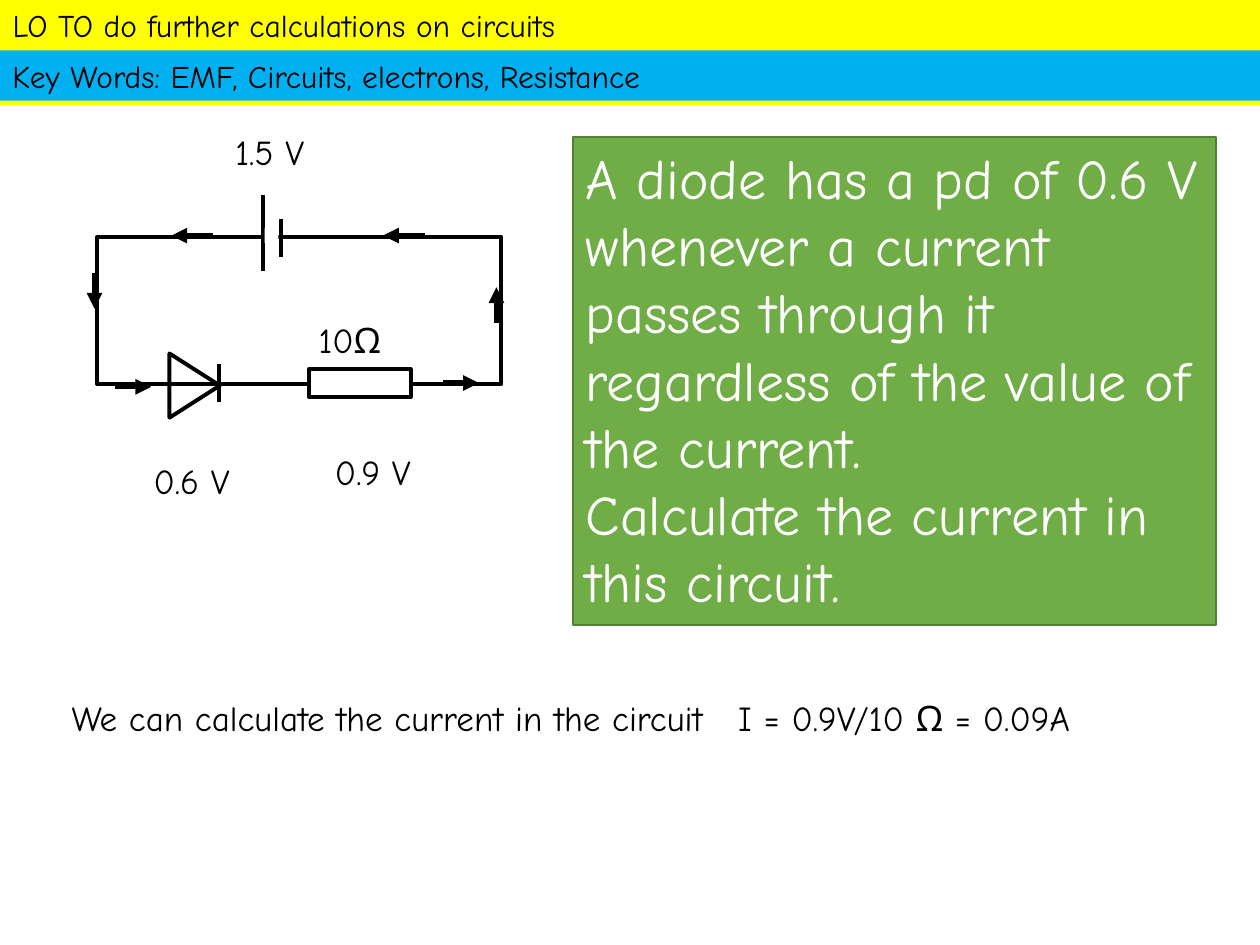
from lxml.etree import SubElement
from pptx import Presentation
from pptx.dml.color import RGBColor
from pptx.enum.shapes import MSO_CONNECTOR, MSO_SHAPE
from pptx.enum.text import MSO_ANCHOR, MSO_AUTO_SIZE, PP_ALIGN
from pptx.oxml.ns import qn
from pptx.util import Inches, Pt

FONT = "Comic Neue"
BLACK = RGBColor(0x00, 0x00, 0x00)
WHITE = RGBColor(0xFF, 0xFF, 0xFF)
YELLOW = RGBColor(0xFF, 0xFF, 0x00)
BLUE = RGBColor(0x00, 0xB0, 0xF0)
GREEN = RGBColor(0x70, 0xAD, 0x47)
DARK_GREEN = RGBColor(0x53, 0x80, 0x35)

OBJECTIVE = "LO TO do further calculations on circuits"
KEY_WORDS = "Key Words: EMF, Circuits, electrons, Resistance"
QUESTION = [
    "A diode has a pd of 0.6 V whenever a current passes through it "
    "regardless of the value of the current.",
    "Calculate the current in this circuit.",
]
ANSWER = "We can calculate the current in the circuit\tI = 0.9V/10 Ω = 0.09A"
ANSWER_TAB = 5.29

LOOP = (0.77, 1.88, 3.21, 1.17)
CELL_GAP = (2.1, 1.81, 0.11, 0.12)
RESISTOR = (2.45, 2.93, 0.81, 0.22)
DIODE = (1.29, 2.86, 0.51, 0.4)
CELL_PLATES = [((2.09, 1.55), (2.09, 2.15)), ((2.23, 1.74), (2.23, 2.04))]
DIODE_BAR = ((1.74, 2.89), (1.74, 3.19))
CURRENT_ARROWS = [
    ((1.69, 1.87), (1.36, 1.87)),
    ((0.75, 2.17), (0.75, 2.45)),
    ((0.91, 3.07), (1.2, 3.07)),
    ((3.52, 3.04), (3.8, 3.04)),
    ((3.94, 2.56), (3.94, 2.28)),
    ((3.37, 1.87), (3.04, 1.87)),
]
LABELS = [
    ("0.6 V", (1.12, 3.6, 0.88, 0.43)),
    ("0.9 V", (2.56, 3.53, 0.88, 0.43)),
    ("1.5 V", (1.77, 0.99, 0.83, 0.43)),
    ("10Ω", (2.43, 2.48, 0.76, 0.43)),
]


def place(shape, box):
    shape.left, shape.top, shape.width, shape.height = map(Inches, box)


def paint(shape, fill=None, line=None, weight=2.25):
    if fill is None:
        shape.fill.background()
    else:
        shape.fill.solid()
        shape.fill.fore_color.rgb = fill
    if line is None:
        shape.line.fill.background()
    else:
        shape.line.color.rgb = line
        shape.line.width = Pt(weight)


def write(shape, paragraphs, size, color=BLACK, wrap=True):
    frame = shape.text_frame
    frame.text = "\n".join(paragraphs)
    frame.word_wrap = wrap
    frame.auto_size = MSO_AUTO_SIZE.SHAPE_TO_FIT_TEXT
    frame.vertical_anchor = MSO_ANCHOR.TOP
    frame.margin_left = frame.margin_right = Inches(0.1)
    frame.margin_top = frame.margin_bottom = Inches(0.05)
    for paragraph in frame.paragraphs:
        paragraph.alignment = PP_ALIGN.LEFT
        paragraph.line_spacing = 1.0
        paragraph.space_before = Pt(0)
        paragraph.font.name = FONT
        paragraph.font.size = Pt(size)
        paragraph.font.color.rgb = color


def add_block(slide, box, kind=MSO_SHAPE.RECTANGLE, **colors):
    block = slide.shapes.add_shape(kind, *map(Inches, box))
    block.shadow.inherit = False
    paint(block, **colors)
    return block


def add_wire(slide, ends, weight=2.25, arrow=False):
    start, end = ends
    wire = slide.shapes.add_connector(
        MSO_CONNECTOR.STRAIGHT, *map(Inches, start + end))
    wire.line.color.rgb = BLACK
    wire.line.width = Pt(weight)
    if arrow:
        SubElement(wire.line._get_or_add_ln(), qn("a:tailEnd"), type="triangle")
    SubElement(wire._element.spPr, qn("a:effectLst"))


def add_circuit(slide):
    add_block(slide, LOOP, fill=WHITE, line=BLACK)
    for plate in CELL_PLATES:
        add_wire(slide, plate)
    add_block(slide, CELL_GAP, fill=WHITE)
    add_block(slide, RESISTOR, fill=WHITE, line=BLACK)
    add_wire(slide, DIODE_BAR)
    for arrow in CURRENT_ARROWS:
        add_wire(slide, arrow, weight=3, arrow=True)
    for label, box in LABELS:
        write(add_block(slide, box, fill=WHITE), [label], 20, wrap=False)
    diode = add_block(slide, DIODE, MSO_SHAPE.ISOSCELES_TRIANGLE, line=BLACK)
    diode.rotation = 90


def main():
    deck = Presentation()
    deck.slide_width, deck.slide_height = Inches(10), Inches(7.5)
    slide = deck.slides.add_slide(deck.slide_layouts[5])

    objective = slide.shapes.title
    place(objective, (0, 0, 10, 0.4))
    paint(objective, fill=YELLOW)
    write(objective, [OBJECTIVE], 18)
    write(add_block(slide, (0, 0.4, 10, 0.4), fill=BLUE), [KEY_WORDS], 18)

    question = add_block(slide, (4.55, 1.09, 5.1, 3.87),
                         fill=GREEN, line=DARK_GREEN, weight=1)
    write(question, QUESTION, 32, WHITE)

    add_circuit(slide)

    answer = slide.shapes.add_textbox(*map(Inches, (0.47, 5.48, 9.18, 0.43)))
    write(answer, [ANSWER], 20)
    properties = answer.text_frame.paragraphs[0]._p.get_or_add_pPr()
    tabs = properties.makeelement(qn("a:tabLst"))
    SubElement(tabs, qn("a:tab"), pos=str(Inches(ANSWER_TAB)), algn="l")
    properties.find(qn("a:defRPr")).addprevious(tabs)

    deck.save("out.pptx")


if __name__ == "__main__":
    main()
